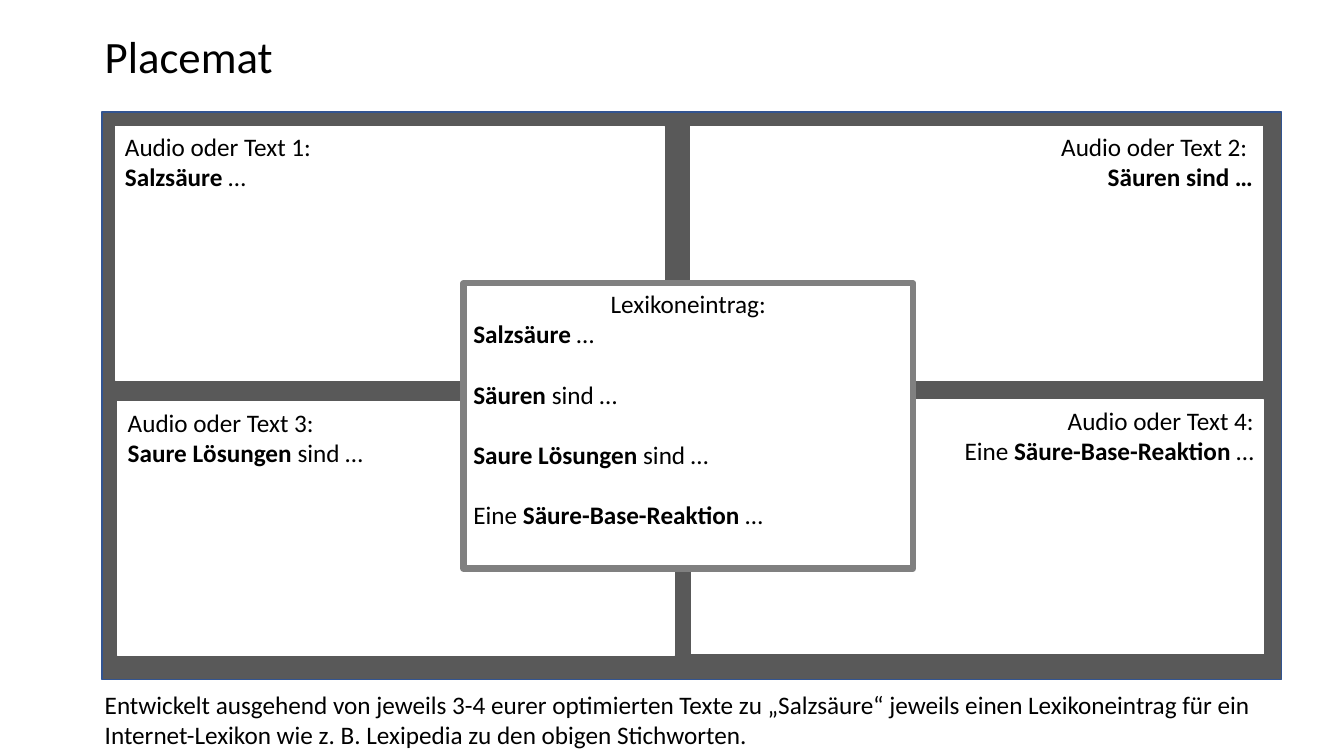
"""Builds the Placemat slide: four text fields around a shared encyclopedia entry."""
from pptx import Presentation, util as u
from pptx.dml.color import RGBColor
from pptx.enum import shapes, text

COLORS = {"mat": "595959", "mat_edge": "325491", "paper": "FFFFFF",
          "entry_edge": "808080", "ink": "000000"}
FONT = "Calibri"
LEFT, CENTER, RIGHT = text.PP_ALIGN.LEFT, text.PP_ALIGN.CENTER, text.PP_ALIGN.RIGHT

SALT = [("Salzsäure", True), (" …", False)]
ACIDS = [("Säuren", True), (" sind …", False)]
SOLUTIONS = [("Saure Lösungen", True), (" sind …", False)]
REACTION = [("Eine ", False), ("Säure-Base-Reaktion", True), (" …", False)]

TITLE = ("Placemat", (2.39, 0.74, 27.94, 1.93))
TASK = ("Entwickelt ausgehend von jeweils 3-4 eurer optimierten Texte zu „Salzsäure“ "
        "jeweils einen Lexikoneintrag für ein Internet-Lexikon wie z. B. Lexipedia "
        "zu den obigen Stichworten.", (2.39, 17.25, 29.95, 1.8))
MAT = (2.57, 2.82, 29.72, 14.3)
FIELDS = [
    ("Audio oder Text 1:", SALT, LEFT, (2.9, 3.18, 13.84, 6.4)),
    ("Audio oder Text 2: ", [("Säuren sind …", True)], RIGHT, (17.4, 3.18, 14.43, 6.4)),
    ("Audio oder Text 3:", SOLUTIONS, LEFT, (2.97, 10.13, 14.02, 6.4)),
    ("Audio oder Text 4:", REACTION, RIGHT, (17.42, 10.08, 14.43, 6.4)),
]
ENTRY = ("Lexikoneintrag:", [SALT, ACIDS, SOLUTIONS, REACTION], (11.68, 7.14, 11.33, 7.19))
ENTRY_GAP = 21.5


def color(name):
    return RGBColor.from_string(COLORS[name])


def add_panel(slide, box, fill, edge, width):
    panel = slide.shapes.add_shape(shapes.MSO_SHAPE.RECTANGLE, *map(u.Cm, box))
    panel.shadow.inherit = False
    panel.fill.solid()
    panel.fill.fore_color.rgb = color(fill)
    panel.line.color.rgb = color(edge)
    panel.line.width = u.Pt(width)
    return panel


def write(shape, lines, size=18):
    frame = shape.text_frame
    frame.word_wrap = True
    frame.vertical_anchor = text.MSO_ANCHOR.TOP
    for index, (runs, align, gap) in enumerate(lines):
        paragraph = frame.paragraphs[0] if index == 0 else frame.add_paragraph()
        paragraph.alignment = align
        paragraph.space_before = u.Pt(gap)
        for words, bold in runs:
            run = paragraph.add_run()
            run.text = words
            run.font.name = FONT
            run.font.size = u.Pt(size)
            run.font.bold = bold
            run.font.color.rgb = color("ink")
    return frame


def add_label(slide, words, box, size=18):
    label = slide.shapes.add_textbox(*map(u.Cm, box))
    return write(label, [([(words, False)], LEFT, 0)], size)


def main():
    deck = Presentation()
    deck.slide_width, deck.slide_height = u.Cm(33.87), u.Cm(19.05)
    slide = deck.slides.add_slide(deck.slide_layouts[6])

    add_panel(slide, MAT, "mat", "mat_edge", 1)
    for heading, starter, align, box in FIELDS:
        field = add_panel(slide, box, "paper", "paper", 0.75)
        write(field, [([(heading, False)], align, 0), (starter, align, 0)])

    heading, starters, box = ENTRY
    entry = add_panel(slide, box, "paper", "entry_edge", 4.5)
    lines = [(starter, LEFT, ENTRY_GAP if row else 0) for row, starter in enumerate(starters)]
    write(entry, [([(heading, False)], CENTER, 0)] + lines)

    add_label(slide, *TASK)
    title = add_label(slide, *TITLE, size=32)
    title.paragraphs[0].line_spacing = 0.9
    deck.save("out.pptx")


if __name__ == "__main__":
    main()
